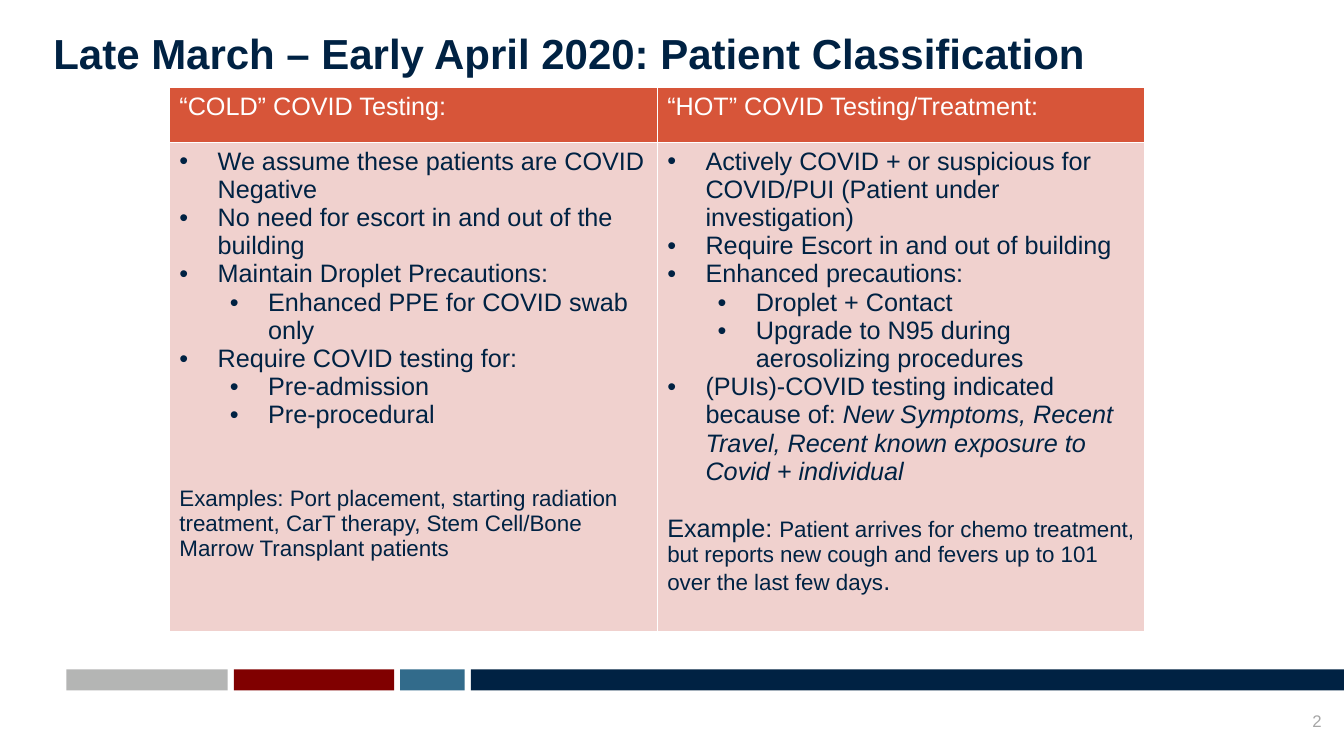
"""Builds the patient classification slide."""
from dataclasses import dataclass
from lxml import etree
from pptx import Presentation
from pptx.dml.color import RGBColor
from pptx.enum.shapes import MSO_SHAPE
from pptx.enum.text import MSO_ANCHOR, PP_ALIGN
from pptx.oxml.ns import qn
from pptx.util import Inches, Pt

RECT = MSO_SHAPE.RECTANGLE
TOP, BOTTOM = MSO_ANCHOR.TOP, MSO_ANCHOR.BOTTOM
LEFT, RIGHT = PP_ALIGN.LEFT, PP_ALIGN.RIGHT
W, H = Inches(13.333), Inches(7.5)
COLORS = {"navy": "002243", "teal": "326B8B", "maroon": "800000", "silver": "B4B5B4",
          "orange": "D75539", "pink": "F0D1CE", "white": "FFFFFF", "gray": "A6A6A6"}
HANG = 2.85
INDENTS = (2.85, 6.6)


@dataclass
class Run:
    text: str
    size: float = 18
    color: str = "navy"
    bold: bool = False
    italic: bool = False


@dataclass
class Para:
    runs: list[Run]
    level: int | None = None
    before: float = 0
    spacing: float = 1.0
    align: int = LEFT


@dataclass
class Bar:
    color: str
    width: float


def x(share: float) -> int:
    return round(W * share / 100)


def y(share: float) -> int:
    return round(H * share / 100)


def rgb(name: str) -> RGBColor:
    return RGBColor.from_string(COLORS[name])


def bullet(text: str, level: int = 0) -> Para:
    return Para([Run(text)], level)


def write(tf, paras: list[Para]) -> None:
    for i, para in enumerate(paras):
        p = tf.add_paragraph() if i else tf.paragraphs[0]
        formats = {"alignment": para.align, "line_spacing": para.spacing}
        if para.before:
            formats["space_before"] = Pt(para.before)
        if para.level is not None:
            formats["level"] = para.level
        for key, value in formats.items():
            setattr(p, key, value)
        if para.level is not None:
            pPr = p._p.get_or_add_pPr()
            pPr.set("marL", str(x(INDENTS[para.level])))
            pPr.set("indent", str(-x(HANG)))
            etree.SubElement(pPr, qn("a:buFont")).set("typeface", "Arial")
            etree.SubElement(pPr, qn("a:buChar")).set("char", "•")
        for run in para.runs:
            r = p.add_run()
            r.text = run.text
            font = {"name": "Arial", "size": Pt(run.size), "bold": run.bold, "italic": run.italic}
            for key, value in font.items():
                setattr(r.font, key, value)
            r.font.color.rgb = rgb(run.color)


def add_text(s, box: tuple, para: Para, anchor: int, insets: tuple) -> None:
    left, top, width, height = box
    tf = s.shapes.add_textbox(x(left), y(top), x(width), y(height)).text_frame
    dx, dy = map(Inches, insets)
    formats = {"word_wrap": True, "vertical_anchor": anchor, "margin_left": dx,
               "margin_right": dx, "margin_top": dy, "margin_bottom": dy}
    for key, value in formats.items():
        setattr(tf, key, value)
    write(tf, [para])


def add_bars(s, bars: list[Bar], left: float, gap: float) -> None:
    for bar in bars:
        sp = s.shapes.add_shape(RECT, x(left), y(88.53), x(bar.width), y(2.8))
        sp.shadow.inherit = False
        sp.fill.solid()
        sp.fill.fore_color.rgb = rgb(bar.color)
        sp.line.fill.background()
        left += bar.width + gap


def style_cell(cell, fill: str) -> None:
    tcPr = cell._tc.get_or_add_tcPr()
    for side in ("lnL", "lnR", "lnT", "lnB"):
        ln = etree.SubElement(tcPr, qn(f"a:{side}"), w=str(Pt(1)))
        solid = etree.SubElement(ln, qn("a:solidFill"))
        etree.SubElement(solid, qn("a:srgbClr"), val=COLORS["white"])
    cell.fill.solid()
    cell.fill.fore_color.rgb = rgb(fill)


def add_groups(s, rows: list[list[list[Para]]]) -> None:
    heights = (7.2, 64.27)
    table = s.shapes.add_table(2, 2, x(12.6), y(11.6), x(72.6), y(sum(heights))).table
    table.first_row = table.horz_banding = False
    for column in table.columns:
        column.width = x(36.3)
    for i, (height, fill) in enumerate(zip(heights, ("orange", "pink"))):
        table.rows[i].height = y(height)
        for j, paras in enumerate(rows[i]):
            cell = table.cell(i, j)
            style_cell(cell, fill)
            write(cell.text_frame, paras)


HEADS = [[Para([Run(text, color="white")])]
         for text in ("“COLD” COVID Testing:", "“HOT” COVID Testing/Treatment:")]
COLD = [
    bullet("We assume these patients are COVID Negative"),
    bullet("No need for escort in and out of the building"),
    bullet("Maintain Droplet Precautions:"),
    bullet("Enhanced PPE for COVID swab only", 1),
    bullet("Require COVID testing for:"),
    bullet("Pre-admission", 1),
    bullet("Pre-procedural", 1),
    Para([Run("Examples: Port placement, starting radiation treatment, CarT therapy, "
              "Stem Cell/Bone Marrow Transplant patients", 16)], before=41),
]
HOT = [
    bullet("Actively COVID + or suspicious for COVID/PUI (Patient under investigation)"),
    bullet("Require Escort in and out of building"),
    bullet("Enhanced precautions:"),
    bullet("Droplet + Contact", 1),
    bullet("Upgrade to N95 during aerosolizing procedures", 1),
    Para([Run("(PUIs)-COVID testing indicated because of: "),
          Run("New Symptoms, Recent Travel, Recent known exposure to Covid + individual",
              italic=True)], 0),
    Para([Run("Example: "),
          Run("Patient arrives for chemo treatment, but reports new cough and fevers "
              "up to 101 over the last few days", 16),
          Run(".")], before=20.5),
]
BARS = [Bar("silver", 12), Bar("maroon", 11.93), Bar("teal", 4.8), Bar("navy", 64.97)]
TITLE = Para([Run("Late March – Early April 2020: Patient Classification", 30, bold=True)],
             spacing=0.9)
NUMBER = Para([Run("2", 12, "gray")], align=RIGHT)


def main() -> None:
    prs = Presentation()
    prs.slide_width, prs.slide_height = W, H
    s = prs.slides.add_slide(prs.slide_layouts[6])
    add_text(s, (95.78, 94, 2.55, 2.67), NUMBER, BOTTOM, (0, 0))
    add_bars(s, BARS, left=4.95, gap=0.45)
    add_groups(s, [HEADS, [COLD, HOT]])
    add_text(s, (3.23, 3.73, 86.25, 7.87), TITLE, TOP, (0.1, 0.05))
    prs.save("out.pptx")


if __name__ == "__main__":
    main()
